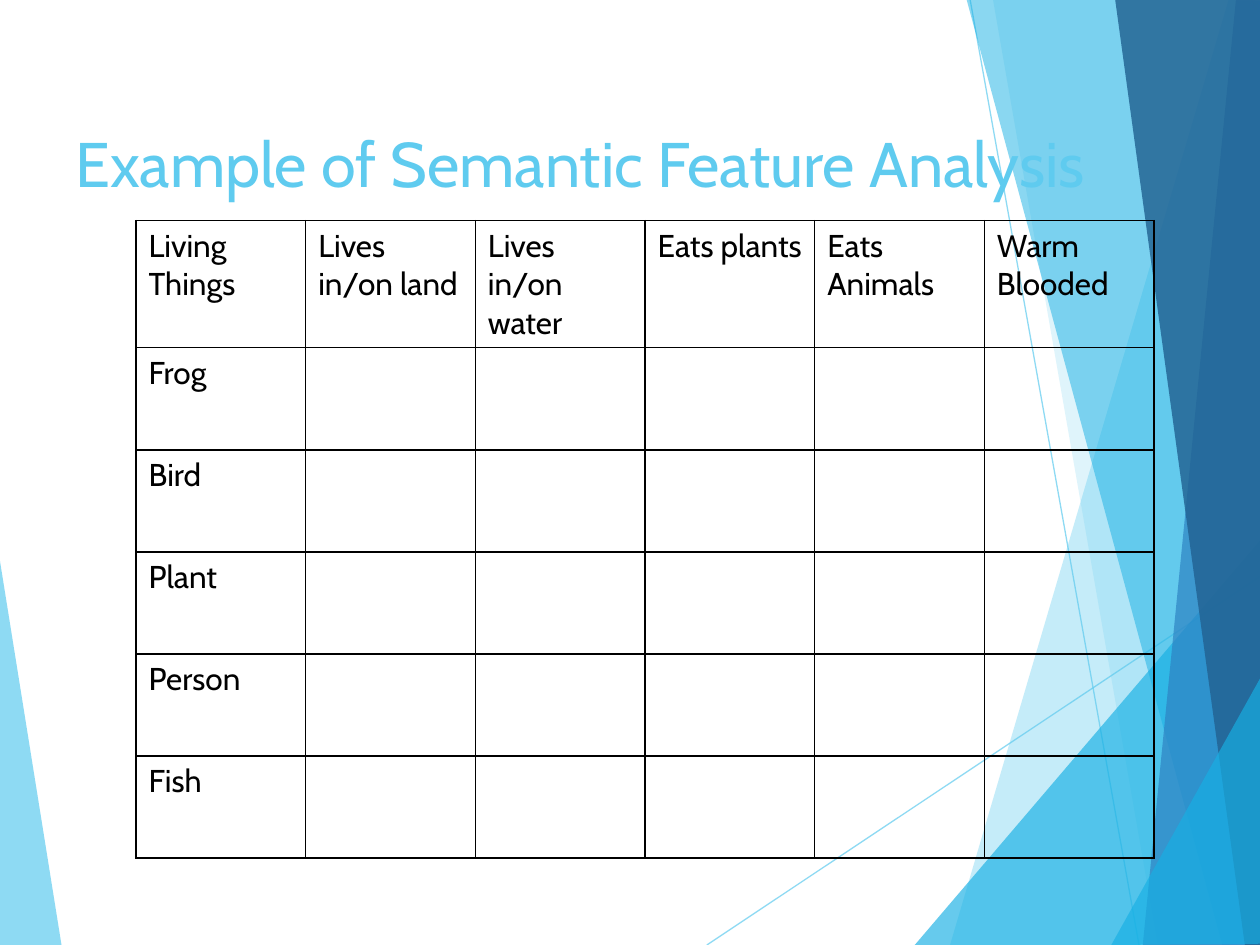
from dataclasses import dataclass

from lxml import etree
from pptx import Presentation
from pptx import util as u
from pptx.dml.color import RGBColor
from pptx.enum import shapes, text
from pptx.oxml.ns import qn


@dataclass(frozen=True)
class Theme:
    font: str = "Cabin"
    sky: str = "5FCBEF"
    cyan: str = "17B0E4"
    blue: str = "2E83C3"
    navy: str = "226292"
    ink: str = "000000"
    title_size: int = 36
    cell_size: int = 18
    ray_width: float = 0.75
    border_width: float = 1


@dataclass(frozen=True)
class Facet:
    points: tuple[tuple[float, float], ...]
    color: str
    opacity: int


@dataclass(frozen=True)
class Ray:
    start: tuple[float, float]
    end: tuple[float, float]


THEME = Theme()
LEFT_FACET = Facet(((-0.01, 4.39), (0.49, 7.51), (-0.01, 7.5)), THEME.sky, 70)
RAYS = (Ray((5.61, 7.5), (10.01, 4.57)), Ray((7.7, 0), (9.04, 7.5)))
RIGHT_FACETS = (
    Facet(((9.75, 0), (7.54, 7.5), (10.02, 7.51), (10.01, 0.01)), THEME.sky, 36),
    Facet(((7.88, -0.01), (9.19, 7.5), (10.01, 7.5), (10.01, -0.01)), THEME.sky, 20),
    Facet(((7.26, 7.5), (10, 4.29), (10.01, 7.5)), THEME.cyan, 66),
    Facet(((7.67, -0.01), (9.7, 7.5), (10.01, 7.49), (10.01, -0.01)), THEME.cyan, 50),
    Facet(((9.81, -0.01), (9.07, 7.5), (10.01, 7.5), (10, -0.01)), THEME.blue, 70),
    Facet(((8.85, -0.01), (9.88, 7.5), (10.02, 7.5), (10, -0.01)), THEME.navy, 82),
    Facet(((8.82, 7.5), (10.02, 5.35), (10.02, 7.49)), THEME.cyan, 66),
)
HEADINGS = ("Living\nThings", "Lives in/on land", "Lives in/on water",
            "Eats plants", "Eats Animals", "Warm Blooded")
LIVING_THINGS = ("Frog", "Bird", "Plant", "Person", "Fish")


def set_opacity(shape, percent: int) -> None:
    for color in shape.element.spPr.iter(qn("a:srgbClr")):
        etree.SubElement(color, qn("a:alpha"), val=str(percent * 1000))


def draw_facet(page, facet: Facet) -> None:
    points = [(u.Inches(x), u.Inches(y)) for x, y in facet.points]
    builder = page.shapes.build_freeform(*points[0])
    builder.add_line_segments(points[1:], close=True)
    shape = builder.convert_to_shape()
    shape.shadow.inherit = False
    shape.fill.solid()
    shape.fill.fore_color.rgb = RGBColor.from_string(facet.color)
    shape.line.fill.background()
    set_opacity(shape, facet.opacity)


def draw_ray(page, ray: Ray) -> None:
    ends = [u.Inches(value) for value in ray.start + ray.end]
    line = page.shapes.add_connector(shapes.MSO_CONNECTOR.STRAIGHT, *ends)
    line.line.width = u.Pt(THEME.ray_width)
    line.line.color.rgb = RGBColor.from_string(THEME.sky)
    etree.SubElement(line.element.spPr, qn("a:effectLst"))
    set_opacity(line, 70)


def write(frame, content: str, size: int, color: str) -> None:
    for index, words in enumerate(content.split("\n")):
        para = frame.add_paragraph() if index else frame.paragraphs[0]
        para.font.size = u.Pt(size)
        if not words:
            continue
        span = para.add_run()
        span.text = words
        span.font.name = THEME.font
        span.font.size = u.Pt(size)
        span.font.bold = False
        span.font.color.rgb = RGBColor.from_string(color)


def draw_title(page, content: str) -> None:
    box = page.shapes.add_textbox(u.Inches(0.5), u.Inches(0.39), u.Inches(9), u.Inches(1.25))
    frame = box.text_frame
    frame.word_wrap = True
    frame.vertical_anchor = text.MSO_ANCHOR.BOTTOM
    write(frame, content, THEME.title_size, THEME.sky)


def add_borders(cell) -> None:
    properties = cell._tc.get_or_add_tcPr()
    for index, side in enumerate(("lnL", "lnR", "lnT", "lnB")):
        border = etree.Element(qn(f"a:{side}"), w=str(u.Pt(THEME.border_width)))
        fill = etree.SubElement(border, qn("a:solidFill"))
        etree.SubElement(fill, qn("a:srgbClr"), val=THEME.ink)
        properties.insert(index, border)


def draw_feature_table(page) -> None:
    rows = [HEADINGS] + [(name,) + ("",) * (len(HEADINGS) - 1) for name in LIVING_THINGS]
    grid = page.shapes.add_table(len(rows), len(HEADINGS), u.Inches(1.08), u.Inches(1.75),
                                 u.Inches(8.08), u.Inches(5.06)).table
    grid.first_row = False
    grid.horz_banding = False
    for index, row in enumerate(grid.rows):
        row.height = u.Inches(0.81 if index else 1.01)
    for row, contents in zip(grid.rows, rows):
        for cell, content in zip(row.cells, contents):
            cell.fill.background()
            add_borders(cell)
            write(cell.text_frame, content, THEME.cell_size, THEME.ink)


def main() -> None:
    deck = Presentation()
    deck.slide_width, deck.slide_height = u.Inches(10), u.Inches(7.5)
    page = deck.slides.add_slide(deck.slide_layouts[6])

    # Background decoration, back to front
    draw_facet(page, LEFT_FACET)
    for ray in RAYS:
        draw_ray(page, ray)
    for facet in RIGHT_FACETS:
        draw_facet(page, facet)

    # Title and feature grid
    draw_title(page, "Example of Semantic Feature Analysis")
    draw_feature_table(page)
    deck.save("out.pptx")


if __name__ == "__main__":
    main()
